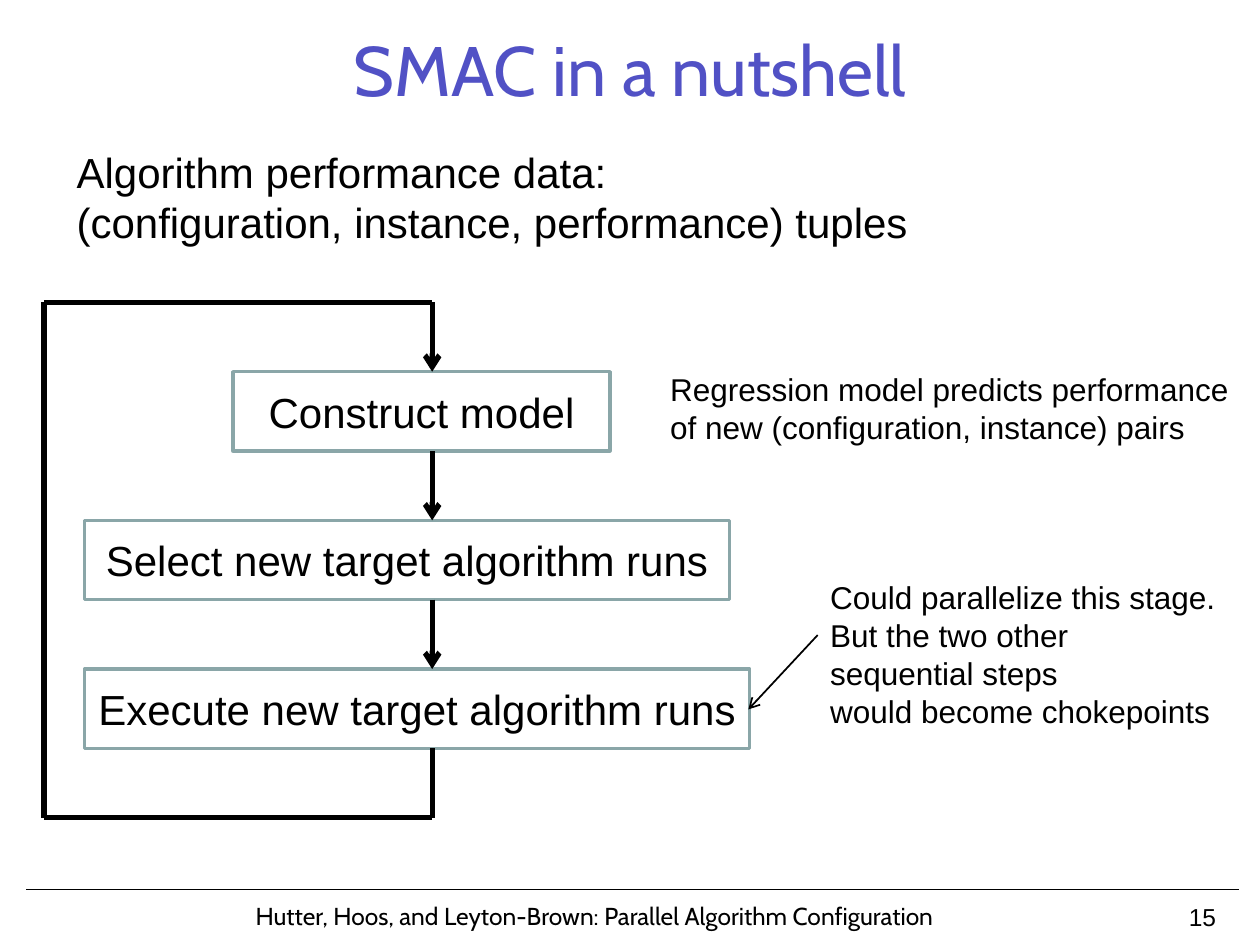
from lxml import etree
from pptx import Presentation
from pptx.dml.color import RGBColor
from pptx.enum.shapes import MSO_CONNECTOR, MSO_SHAPE
from pptx.enum.text import MSO_ANCHOR, PP_ALIGN
from pptx.oxml.ns import qn
from pptx.util import Inches, Pt

LEFT, CENTER, RIGHT = PP_ALIGN.LEFT, PP_ALIGN.CENTER, PP_ALIGN.RIGHT
TOP, MIDDLE = MSO_ANCHOR.TOP, MSO_ANCHOR.MIDDLE
RECTANGLE, STRAIGHT = MSO_SHAPE.RECTANGLE, MSO_CONNECTOR.STRAIGHT

TITLE = "SMAC in a nutshell"
TITLE_AREA = (0.25, 0.17, 9.5, 0.75)
STAGES = [
    ("Construct model", 1.85, 2.99),
    ("Select new target algorithm runs", 0.67, 5.12),
    ("Execute new target algorithm runs", 0.67, 5.28),
]
NOTES = [
    ("Algorithm performance data:\n(configuration, instance, performance) tuples",
     (0.51, 1.11, 6.87, 0.91), 24),
    ("Regression model predicts performance\nof new (configuration, instance) pairs",
     (5.22, 2.89, 4.75, 0.71), 18),
    ("Could parallelize this stage.\nBut the two other\nsequential steps\n"
     "would become chokepoints", (6.49, 4.54, 3.29, 1.31), 18),
]
FOOTER = [
    ("Hutter, Hoos, and Leyton-Brown: Parallel Algorithm Configuration",
     (1.93, 7.1, 5.98, 0.4), "Cabin", LEFT),
    ("15", (7.17, 7.11, 2.58, 0.38), "Arial", RIGHT),
]
BLACK, WHITE, TITLE_BLUE, STAGE_BORDER = "000000", "FFFFFF", "5151C5", "8AA6A8"
STAGE_TOP, STAGE_HEIGHT, STAGE_GAP = 2.95, 0.63, 0.55
FLOW_X, LOOP_X = 3.43, 0.35


def color(value):
    return RGBColor.from_string(value)


def write(holder, text, size, font="Arial", ink=BLACK, align=LEFT, anchor=TOP, wrap=True):
    frame = holder.text_frame
    frame_format = {"word_wrap": wrap, "vertical_anchor": anchor}
    for name, value in frame_format.items():
        setattr(frame, name, value)
    paragraph = frame.paragraphs[0]
    paragraph.text = text
    paragraph.alignment = align
    font_format = {"size": Pt(size), "name": font, "bold": False}
    for run in paragraph.runs:
        for name, value in font_format.items():
            setattr(run.font, name, value)
        run.font.color.rgb = color(ink)


def add_text(slide, text, area, size, **text_format):
    write(slide.shapes.add_textbox(*map(Inches, area)), text, size, **text_format)


def add_stage(slide, label, left, top, width):
    stage = slide.shapes.add_shape(
        RECTANGLE, *map(Inches, (left, top, width, STAGE_HEIGHT)))
    stage.shadow.inherit = False
    stage.fill.solid()
    stage.fill.fore_color.rgb = color(WHITE)
    stage.line.color.rgb = color(STAGE_BORDER)
    stage.line.width = Pt(2)
    write(stage, label, 24, align=CENTER, anchor=MIDDLE, wrap=False)


def add_line(slide, start, end, width=3, arrow=False):
    line = slide.shapes.add_connector(STRAIGHT, *map(Inches, start + end))
    line.line.color.rgb = color(BLACK)
    line.line.width = Pt(width)
    if arrow:
        etree.SubElement(line.line._get_or_add_ln(), qn("a:tailEnd"), type="arrow")
    etree.SubElement(line._element.spPr, qn("a:effectLst"))


def main():
    deck = Presentation()
    deck.slide_width, deck.slide_height = Inches(10), Inches(7.5)
    slide = deck.slides.add_slide(deck.slide_layouts[5])

    title = slide.shapes.title
    title.left, title.top, title.width, title.height = map(Inches, TITLE_AREA)
    write(title, TITLE, 40, font="Cabin", ink=TITLE_BLUE, align=CENTER, anchor=MIDDLE)

    add_line(slide, (9.83, 7.06), (0.21, 7.06), width=0.75)
    for text, area, font, align in FOOTER:
        add_text(slide, text, area, 14, font=font, align=align)

    for index, (label, left, width) in enumerate(STAGES):
        top = STAGE_TOP + index * (STAGE_HEIGHT + STAGE_GAP)
        add_stage(slide, label, left, top, width)
        add_line(slide, (FLOW_X, top - STAGE_GAP), (FLOW_X, top), arrow=True)

    last_bottom = top + STAGE_HEIGHT
    loop_top, loop_bottom = STAGE_TOP - STAGE_GAP, last_bottom + STAGE_GAP
    loop = [(FLOW_X, last_bottom), (FLOW_X, loop_bottom), (LOOP_X, loop_bottom),
            (LOOP_X, loop_top), (FLOW_X, loop_top)]
    for start, end in zip(loop, loop[1:]):
        add_line(slide, start, end)

    for text, area, size in NOTES:
        add_text(slide, text, area, size, wrap=False)
    add_line(slide, (6.49, 5.04), (5.94, 5.63), width=1, arrow=True)

    deck.save("out.pptx")


if __name__ == "__main__":
    main()
